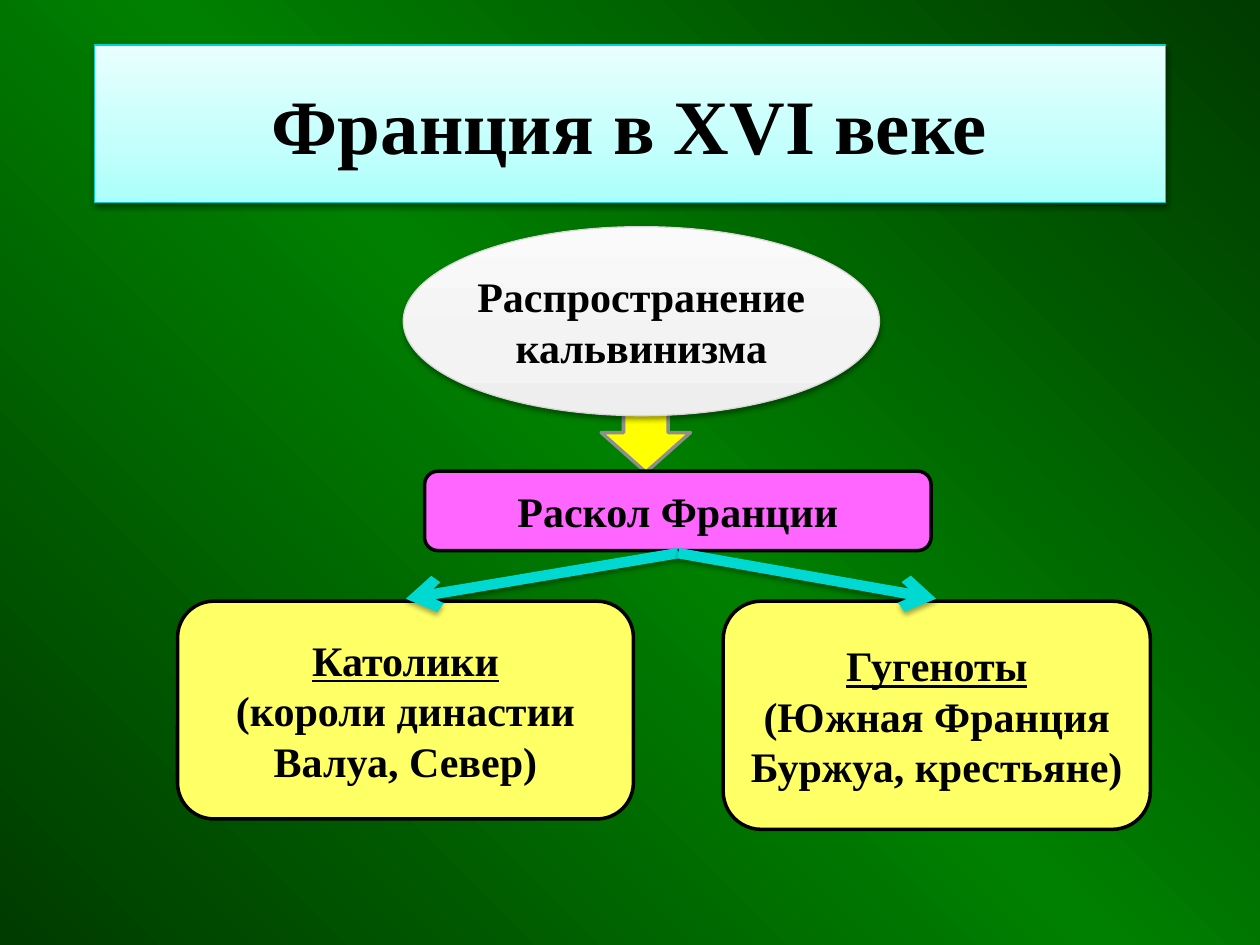
"""Build a slide on the religious split of France in the 16th century."""
from lxml.etree import SubElement
from pptx import Presentation
from pptx.dml.color import RGBColor
from pptx.enum.shapes import MSO_CONNECTOR, MSO_SHAPE
from pptx.enum.text import MSO_ANCHOR, PP_ALIGN
from pptx.oxml.ns import qn
from pptx.util import Cm, Pt

colour = RGBColor.from_string


def add_box(page, kind, place, fill, line, width=2):
    box = page.shapes.add_shape(kind, *[Cm(value) for value in place])
    box.shadow.inherit = False
    if fill:
        box.fill.solid()
        box.fill.fore_color.rgb = colour(fill)
    box.line.color.rgb = colour(line)
    box.line.width = Pt(width)
    return box


def write(box, text, size=24, wrap=True, underline_first=False):
    frame = box.text_frame
    frame.word_wrap = wrap
    frame.vertical_anchor = MSO_ANCHOR.MIDDLE
    for index, words in enumerate(text.split("\n")):
        para = frame.add_paragraph() if index else frame.paragraphs[0]
        para.alignment = PP_ALIGN.CENTER
        span = para.add_run()
        span.text = words
        span.font.name = "Times New Roman"
        span.font.size = Pt(size)
        span.font.bold = True
        span.font.underline = underline_first and index == 0
        span.font.color.rgb = colour("000000")


deck = Presentation()
deck.slide_width, deck.slide_height = Cm(25.4), Cm(19.05)
page = deck.slides.add_slide(deck.slide_layouts[6])

add_box(page, MSO_SHAPE.DOWN_ARROW, (12.12, 7.92, 1.8, 1.6), "FFFF00", "8E8E8E")

split = add_box(page, MSO_SHAPE.ROUNDED_RECTANGLE, (8.56, 9.5, 10.21, 1.6), "FF66FF", "000000")
write(split, "Раскол Франции")

for place, text in [
    ((14.58, 12.12, 8.61, 4.6), "Гугеноты\n(Южная Франция\nБуржуа, крестьяне)"),
    ((3.58, 12.12, 9.19, 4.39), "Католики\n(короли династии Валуа, Север)"),
]:
    side = add_box(page, MSO_SHAPE.ROUNDED_RECTANGLE, place, "FFFF66", "000000")
    write(side, text, underline_first=True)

shadows = []
for end in (8.18, 18.87):
    branch = page.shapes.add_connector(
        MSO_CONNECTOR.STRAIGHT, Cm(13.67), Cm(11.15), Cm(end), Cm(12.07))
    branch.line.color.rgb = colour("00D8D2")
    branch.line.width = Pt(6)
    properties = branch.element.spPr
    SubElement(properties.find(qn("a:ln")), qn("a:tailEnd"), type="arrow")
    shadows.append((SubElement(properties, qn("a:effectLst")), 1.8, 35))

title = add_box(page, MSO_SHAPE.RECTANGLE, (1.9, 0.91, 21.59, 3.18), None, "00D3CD", 0.75)
write(title, "Франция в XVI веке", size=44)

cause = add_box(page, MSO_SHAPE.OVAL, (8.13, 4.57, 9.6, 3.81), None, "D7D7D7", 0.75)
write(cause, "Распространение\nкальвинизма", wrap=False)

for holder, element, angle, stops in [
    (page.background, page.element.cSld, 45, {0: "003B00", 50: "008000", 100: "003B00"}),
    (title, title.element.spPr, 90, {0: "AAFFFA", 35: "C3FFFC", 100: "E8FFFE"}),
    (cause, cause.element.spPr, 90, {0: "EEEEEE", 35: "F3F3F3", 100: "FAFAFA"}),
]:
    holder.fill.gradient()
    holder.fill.gradient_angle = angle
    stop_list = next(element.iter(qn("a:gsLst")))
    for stop in list(stop_list):
        stop_list.remove(stop)
    for position, shade in stops.items():
        stop = SubElement(stop_list, qn("a:gs"), pos=str(position * 1000))
        SubElement(stop, qn("a:srgbClr"), val=str(colour(shade)))

for box in (title, cause):
    shadows.append((box.element.spPr.find(qn("a:effectLst")), 1.6, 38))
for effects, distance, opacity in shadows:
    shadow = SubElement(
        effects, qn("a:outerShdw"), blurRad=str(Pt(3.1)), dist=str(Pt(distance)),
        dir="5400000", rotWithShape="0")
    tint = SubElement(shadow, qn("a:srgbClr"), val="000000")
    SubElement(tint, qn("a:alpha"), val=str(opacity * 1000))

deck.save("out.pptx")
